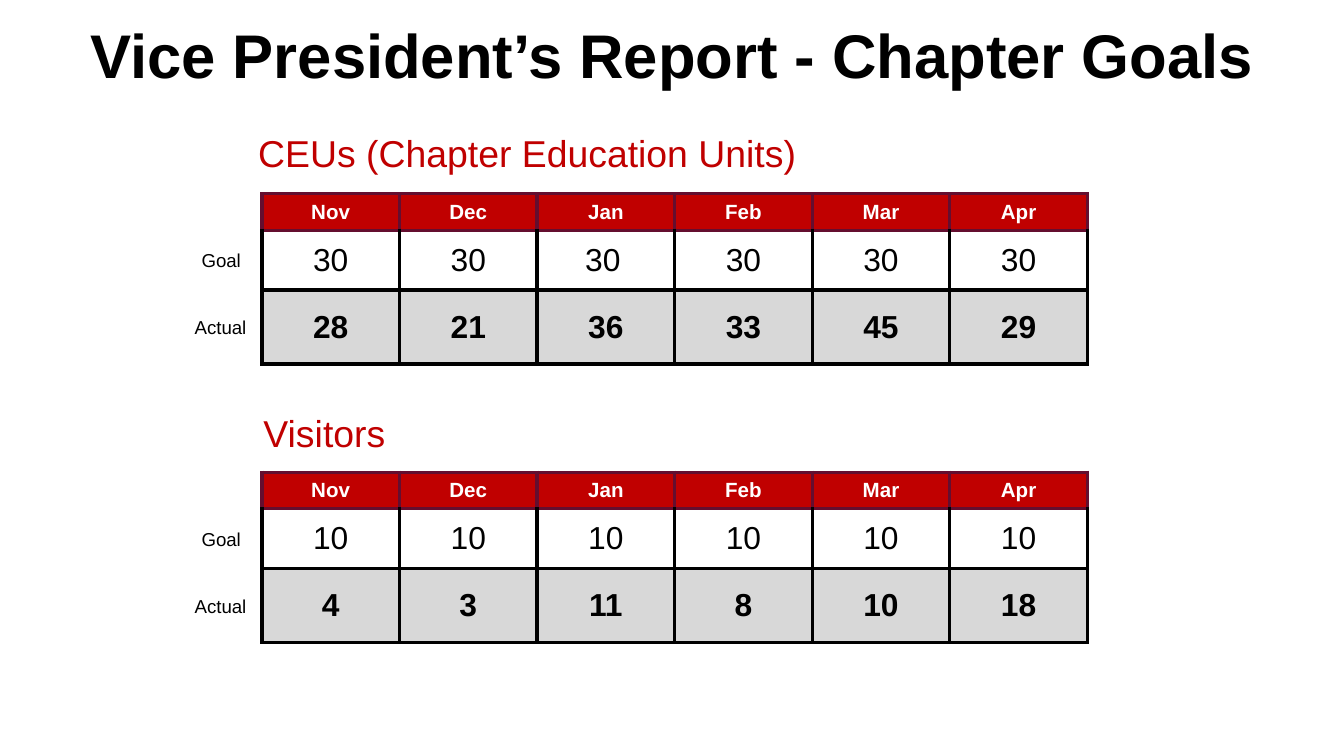
from lxml.etree import SubElement
from pptx import Presentation
from pptx.dml.color import RGBColor
from pptx.enum.text import MSO_ANCHOR, PP_ALIGN
from pptx.oxml.ns import qn
from pptx.util import Cm, Pt

RED, WINE, BLACK, WHITE, GRAY = "C00000", "640E2F", "000000", "FFFFFF", "D8D8D8"
MONTHS = ["Nov", "Dec", "Jan", "Feb", "Mar", "Apr"]
TABLE_LEFT = 4.95
COLUMN_WIDTH = 2.6
ROW_HEIGHTS = [0.69, 1.13, 1.4]
CELL_MARGIN = 0.08
ROW_STYLES = [
    {"fill": RED, "top": WINE, "border": WINE, "size": 11, "color": WHITE, "bold": True},
    {"fill": WHITE, "top": WINE, "border": BLACK, "size": 17, "color": BLACK, "bold": False},
    {"fill": GRAY, "top": BLACK, "border": BLACK, "size": 17, "color": BLACK, "bold": True},
]


def rgb(code):
    """Turn a hex string into a colour."""
    return RGBColor.from_string(code)


def write(paragraph, text, size=10, color=BLACK, bold=False, align=PP_ALIGN.LEFT, spacing=None):
    """Put formatted text into a paragraph."""
    run = paragraph.add_run()
    run.text = text
    run.font.name = "Arial"
    run.font.size = Pt(size)
    run.font.bold = bold
    run.font.color.rgb = rgb(color)
    paragraph.alignment = align
    if spacing:
        paragraph.line_spacing = spacing


def add_label(slide, text, left, top, width, height, **text_format):
    """Add a text box without margins, centred vertically."""
    frame = slide.shapes.add_textbox(Cm(left), Cm(top), Cm(width), Cm(height)).text_frame
    frame.word_wrap = True
    frame.vertical_anchor = MSO_ANCHOR.MIDDLE
    frame.margin_left = frame.margin_right = frame.margin_top = frame.margin_bottom = 0
    write(frame.paragraphs[0], text, **text_format)


def add_border(cell, side, color):
    """Draw one side of a cell's border."""
    line = SubElement(cell._tc.get_or_add_tcPr(), qn(f"a:ln{side}"), w=str(Pt(2)))
    fill = SubElement(line, qn("a:solidFill"))
    SubElement(fill, qn("a:srgbClr"), val=color)


def fill_cell(cell, text, fill, top, border, **text_format):
    """Set a cell's borders, fill and text."""
    for side in "LRTB":
        add_border(cell, side, top if side == "T" else border)
    cell.fill.solid()
    cell.fill.fore_color.rgb = rgb(fill)
    cell.vertical_anchor = MSO_ANCHOR.MIDDLE
    cell.margin_left = cell.margin_right = Cm(CELL_MARGIN)
    cell.margin_top = cell.margin_bottom = Cm(CELL_MARGIN)
    write(cell.text_frame.paragraphs[0], text, align=PP_ALIGN.CENTER, **text_format)


def add_goal_table(slide, top, goals, actuals):
    """Add a month table with its row labels and return the table."""
    rows = [MONTHS, goals, actuals]
    table = slide.shapes.add_table(
        len(rows), len(MONTHS), Cm(TABLE_LEFT), Cm(top),
        Cm(COLUMN_WIDTH * len(MONTHS)), Cm(sum(ROW_HEIGHTS))).table
    for column in table.columns:
        column.width = Cm(COLUMN_WIDTH)
    for row_index, (values, height, style) in enumerate(zip(rows, ROW_HEIGHTS, ROW_STYLES)):
        table.rows[row_index].height = Cm(height)
        for column_index, value in enumerate(values):
            fill_cell(table.cell(row_index, column_index), str(value), **style)
    label_height = 0.4
    for row_index, name, left in [(1, "Goal", 3.81), (2, "Actual", 3.68)]:
        middle = top + sum(ROW_HEIGHTS[:row_index]) + ROW_HEIGHTS[row_index] / 2
        add_label(slide, name, left, middle - label_height / 2, 1.02, label_height)
    return table


def main():
    """Build the chapter goals slide."""
    presentation = Presentation()
    presentation.slide_width, presentation.slide_height = Cm(25.4), Cm(14.28)
    slide = presentation.slides.add_slide(presentation.slide_layouts[6])
    add_label(slide, "Vice President’s Report - Chapter Goals", 1.07, 0, 23.27, 2.2,
              size=33, bold=True, align=PP_ALIGN.CENTER, spacing=0.9)

    add_label(slide, "CEUs (Chapter Education Units)", 4.88, 2.46, 15.34, 0.86, size=20, color=RED)
    education = add_goal_table(slide, 3.66, [30] * 6, [28, 21, 36, 33, 45, 29])
    january_goal = education.cell(1, MONTHS.index("Jan"))
    january_goal.margin_left = Cm(CELL_MARGIN + 0.83)
    january_goal.text_frame.paragraphs[0].alignment = PP_ALIGN.LEFT

    add_label(slide, "Visitors", 4.98, 7.75, 15.34, 0.86, size=20, color=RED)
    add_goal_table(slide, 8.92, [10] * 6, [4, 3, 11, 8, 10, 18])
    presentation.save("out.pptx")


if __name__ == "__main__":
    main()
